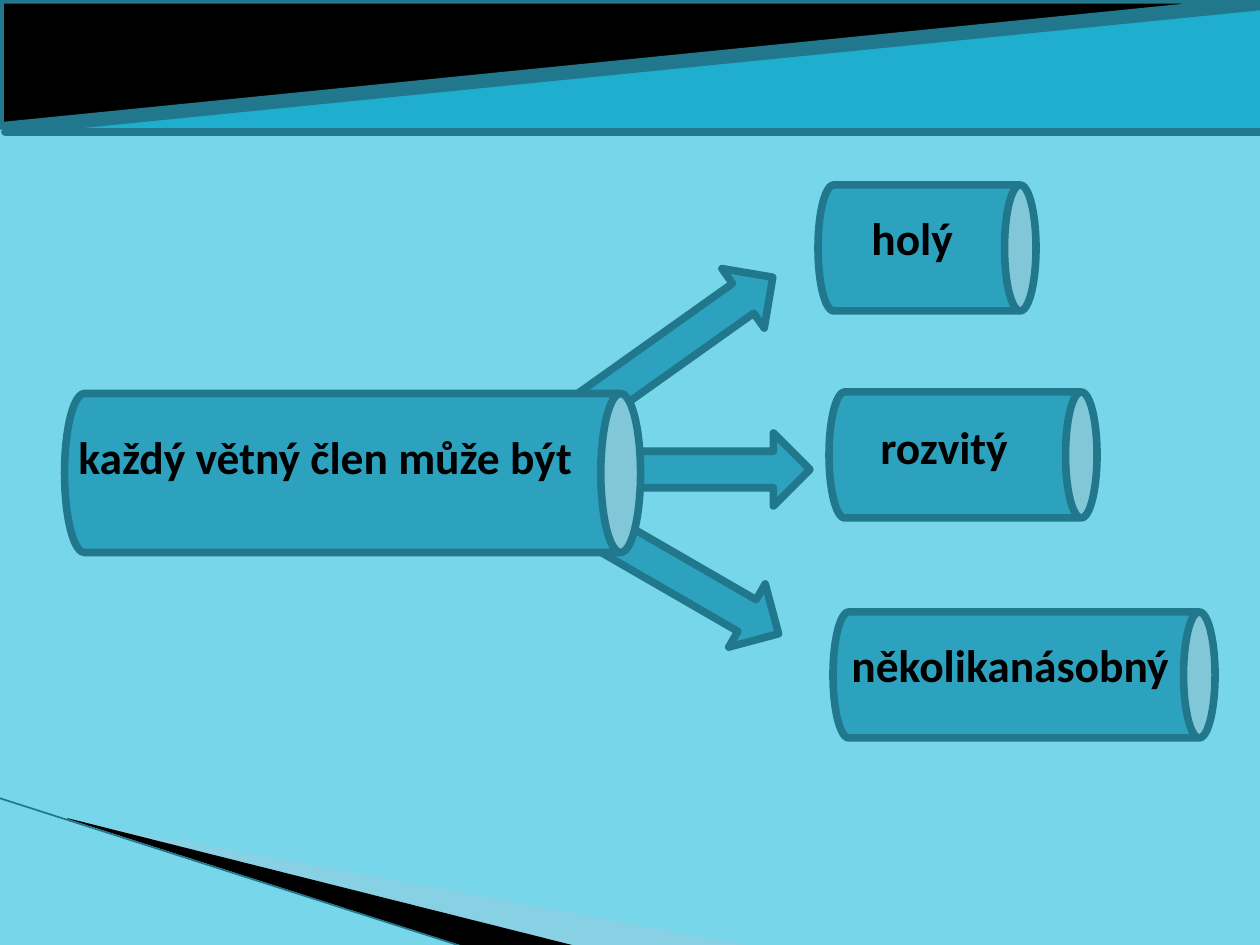
"""Builds a slide on the three forms a sentence element can take."""
import lxml.etree
import pptx
import pptx.dml.color
import pptx.enum.shapes
import pptx.enum.text
import pptx.oxml.ns
import pptx.util

SCALE = 914400 / 126
SHAPES = pptx.enum.shapes.MSO_SHAPE
BLACK, TEAL, OUTLINE = "000000", "2DA2BF", "21788D"


def px(length):
    return pptx.util.Emu(round(length * SCALE))


def rgb(value):
    return pptx.dml.color.RGBColor.from_string(value)


class Painter:
    def __init__(self, slide, font="Calibri", size=26, line_width=4.33):
        self.slide = slide
        self.shapes = slide.shapes
        self.font = font
        self.size = size
        self.line_width = line_width

    def background(self, color):
        fill = self.slide.background.fill
        fill.solid()
        fill.fore_color.rgb = rgb(color)

    def polygon(self, points, color, opacity=100):
        builder = self.shapes.build_freeform(*points[0], scale=SCALE)
        builder.add_line_segments(points[1:], close=True)
        wedge = builder.convert_to_shape()
        wedge.shadow.inherit = False
        wedge.fill.solid()
        wedge.fill.fore_color.rgb = rgb(color)
        wedge.line.fill.background()
        if opacity < 100:
            tint = wedge._element.spPr.find(".//" + pptx.oxml.ns.qn("a:srgbClr"))
            alpha = lxml.etree.SubElement(tint, pptx.oxml.ns.qn("a:alpha"))
            alpha.set("val", str(opacity * 1000))

    def line(self, start, end, color, width):
        edge = self.shapes.add_connector(
            pptx.enum.shapes.MSO_CONNECTOR.STRAIGHT,
            *map(px, start + end))
        edge.line.color.rgb = rgb(color)
        edge.line.width = pptx.util.Pt(width)
        lxml.etree.SubElement(edge._element.spPr, pptx.oxml.ns.qn("a:effectLst"))

    def block(self, kind, box, rotation, color=TEAL):
        block = self.shapes.add_shape(kind, *map(px, box))
        block.rotation = rotation
        block.shadow.inherit = False
        block.fill.solid()
        block.fill.fore_color.rgb = rgb(color)
        block.line.color.rgb = rgb(OUTLINE)
        block.line.width = pptx.util.Pt(self.line_width)

    def label(self, wording, left, top, width, height=68):
        label = self.shapes.add_textbox(*map(px, (left, top, width, height)))
        frame = label.text_frame
        frame.text = wording
        frame.word_wrap = False
        frame.auto_size = pptx.enum.text.MSO_AUTO_SIZE.SHAPE_TO_FIT_TEXT
        font = frame.paragraphs[0].runs[0].font
        font.name = self.font
        font.size = pptx.util.Pt(self.size)
        font.bold = True
        font.color.rgb = rgb(BLACK)


def main():
    deck = pptx.Presentation()
    deck.slide_width, deck.slide_height = px(1260), px(945)
    painter = Painter(deck.slides.add_slide(deck.slide_layouts[6]))
    painter.background("78D6EA")

    painter.polygon([(69, 820), (750, 946), (575, 946), (69, 819)], "A0CBDC", 40)
    painter.polygon([(67, 818), (576, 946), (469, 948), (68, 819)], BLACK)
    painter.line((-1, 798), (467, 948), OUTLINE, 0.95)

    for left, top, rotation in ((659, 355, 270), (643, 462, 300), (643, 229, 234.6)):
        painter.block(SHAPES.DOWN_ARROW, (left, top, 73, 229), rotation)

    painter.block(SHAPES.CAN, (273, 185, 159, 576), 90)
    painter.label("každý větný člen může být", 66, 423, 524)

    forms = (
        ("holý", (864, 139, 126, 218), (859, 204, 108)),
        ("rozvitý", (900, 321, 126, 268), (868, 413, 154)),
        ("několikanásobný", (961, 484, 126, 382), (839, 631, 347)),
    )
    for _, can, _ in forms:
        painter.block(SHAPES.CAN, can, 90)
    for wording, _, place in forms:
        painter.label(wording, *place)

    painter.block(SHAPES.RIGHT_TRIANGLE, (567, -567, 126, 1260), 90, BLACK)
    painter.block(SHAPES.RIGHT_TRIANGLE, (572, -561, 126, 1260), 270, "1FAECD")
    deck.save("out.pptx")


if __name__ == "__main__":
    main()
